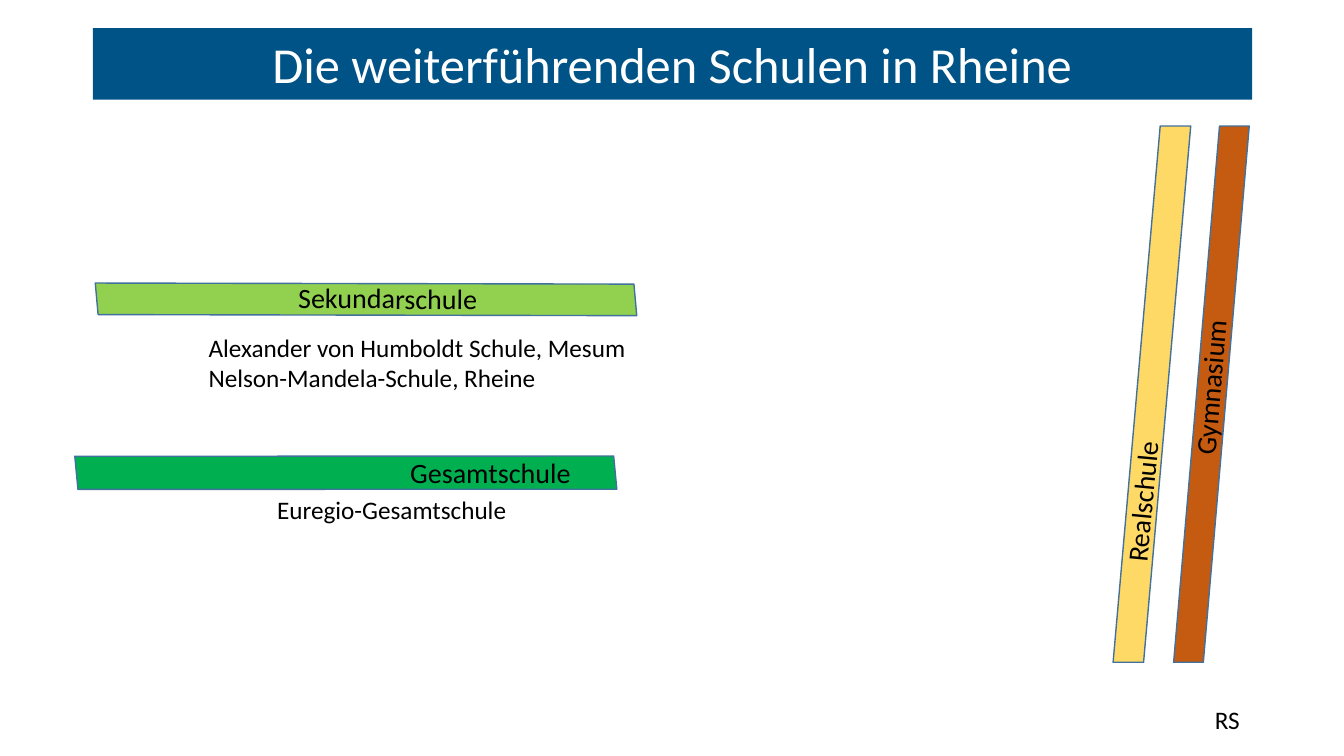
from pptx import Presentation
from pptx.dml.color import RGBColor
from pptx.enum.shapes import MSO_SHAPE
from pptx.enum.text import MSO_ANCHOR, MSO_AUTO_SIZE, PP_ALIGN
from pptx.util import Emu, Pt

SLANT = MSO_SHAPE.PARALLELOGRAM
BOTTOM = MSO_ANCHOR.BOTTOM
FIXED = MSO_AUTO_SIZE.NONE
CENTER = PP_ALIGN.CENTER
LEFT = PP_ALIGN.LEFT

BLACK = RGBColor(0, 0, 0)
WHITE = RGBColor(255, 255, 255)
NAVY = RGBColor(0x00, 0x53, 0x86)
EDGE = RGBColor(0x41, 0x71, 0x9C)
LIME = RGBColor(0x92, 0xD0, 0x50)
GREEN = RGBColor(0x00, 0xB0, 0x50)
YELLOW = RGBColor(0xFF, 0xD9, 0x66)
RUST = RGBColor(0xC5, 0x5A, 0x11)

FONT = "Calibri"
PX = 9144
SKEW = 0.607

TITLE = "Die weiterführenden Schulen in Rheine"
TITLE_BOX = (92, 28, 1150, 71)
BANDS = [
    (LIME, (323, 31, 80, 532), 84.9, "Sekundarschule", (286, 274, 217, 43), 0.4),
    (GREEN, (301, 203, 84, 532), 84.5, "Gesamtschule", (397, 447, 197, 43), 0.1),
    (YELLOW, (1104, 125, 77, 532), 0, "Realschule", (1057, 469, 153, 44), 275.4),
    (RUST, (1164, 125, 75, 532), 0, "Gymnasium", (1117, 355, 168, 44), 274.7),
]
NOTES = [
    ("Alexander von Humboldt Schule, Mesum\nNelson-Mandela-Schule, Rheine",
     (197, 325, 525, 70)),
    ("Euregio-Gesamtschule", (265, 485, 336, 40)),
    ("RS", (1195, 694, 84, 40)),
]


def scale(box):
    return [Emu(n * PX) for n in box]


def write(frame, text, size, color, align=LEFT):
    frame.text = text
    frame.word_wrap = True
    frame.auto_size = FIXED
    for para in frame.paragraphs:
        para.alignment = align
        for run in para.runs:
            run.font.name = FONT
            run.font.size = Pt(size)
            run.font.color.rgb = color


def label(slide, text, box, size, turn=0):
    shape = slide.shapes.add_textbox(*scale(box))
    shape.rotation = turn
    write(shape.text_frame, text, size, BLACK)


def band(slide, fill, box, turn):
    shape = slide.shapes.add_shape(SLANT, *scale(box))
    shape.adjustments[0] = SKEW
    shape.rotation = turn
    shape.shadow.inherit = False
    shape.fill.solid()
    shape.fill.fore_color.rgb = fill
    shape.line.color.rgb = EDGE
    shape.line.width = Pt(1)


def main():
    deck = Presentation()
    deck.slide_width, deck.slide_height = scale((1333, 750))
    slide = deck.slides.add_slide(deck.slide_layouts[5])

    title = slide.shapes.title
    title.left, title.top, title.width, title.height = scale(TITLE_BOX)
    title.fill.solid()
    title.fill.fore_color.rgb = NAVY
    write(title.text_frame, TITLE, 36, WHITE, CENTER)
    title.text_frame.vertical_anchor = BOTTOM
    title.text_frame.paragraphs[0].line_spacing = 0.9

    for fill, box, turn, name, place, tilt in BANDS:
        band(slide, fill, box, turn)
        label(slide, name, place, 20, tilt)
    for text, box in NOTES:
        label(slide, text, box, 18)

    deck.save("out.pptx")


if __name__ == "__main__":
    main()
